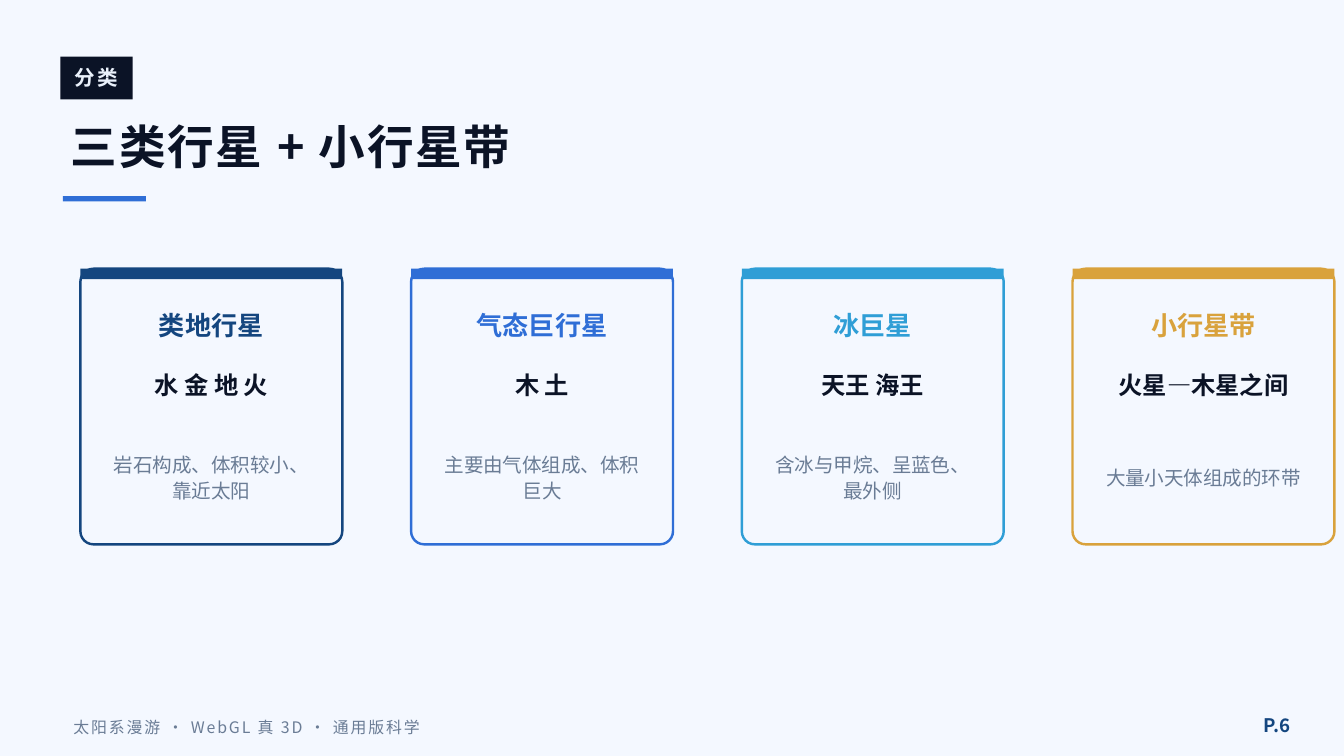
from pptx import Presentation
from pptx.dml.color import RGBColor
from pptx.enum.shapes import MSO_SHAPE
from pptx.enum.text import MSO_ANCHOR, PP_ALIGN
from pptx.util import Cm, Pt

RECT = MSO_SHAPE.RECTANGLE
ROUND = MSO_SHAPE.ROUNDED_RECTANGLE
MIDDLE = MSO_ANCHOR.MIDDLE
LEFT, CENTER, RIGHT = PP_ALIGN.LEFT, PP_ALIGN.CENTER, PP_ALIGN.RIGHT

FONT = "Noto Sans CJK SC"
PAPER, INK, NAVY, BLUE, GRAY = "F4F8FF", "0B1326", "14467F", "2F6ED6", "6A7C95"
CARDS = [
    ("类地行星", "水 金 地 火", "岩石构成、体积较小、靠近太阳", NAVY),
    ("气态巨行星", "木 土", "主要由气体组成、体积巨大", BLUE),
    ("冰巨星", "天王 海王", "含冰与甲烷、呈蓝色、最外侧", "2F9ED6"),
    ("小行星带", "火星—木星之间", "大量小天体组成的环带", "D9A23C"),
]
START, STEP, TOP, WIDTH, HEIGHT, PAD = 1.52, 6.25, 5.08, 4.95, 5.21, 0.3


def paint(fill, color):
    """Give a fill one solid colour."""
    fill.solid()
    fill.fore_color.rgb = RGBColor.from_string(color)


def add_box(slide, x, y, w, h, color, kind=RECT, line=None):
    """Add a filled shape, with an outline if a line colour is given."""
    shape = slide.shapes.add_shape(kind, Cm(x), Cm(y), Cm(w), Cm(h))
    shape.shadow.inherit = False
    paint(shape.fill, color)
    if line:
        paint(shape.line.fill, line)
        shape.line.width = Pt(1.3)
    else:
        shape.line.fill.background()
    return shape


def add_text(slide, text, x, y, w, h, size, color, bold=False, align=LEFT,
             track=0, lead=None, inset=0.25):
    """Add one line or paragraph of text, centred in height."""
    frame = slide.shapes.add_textbox(Cm(x), Cm(y), Cm(w), Cm(h)).text_frame
    frame.word_wrap = True
    frame.vertical_anchor = MIDDLE
    frame.margin_left = frame.margin_right = Cm(inset)
    para = frame.paragraphs[0]
    para.alignment = align
    if lead:
        para.line_spacing = Pt(lead)
    run = para.add_run()
    run.text = text
    font = run.font
    font.size, font.bold, font.name = Pt(size), bold, FONT
    font.color.rgb = RGBColor.from_string(color)
    props = run.font._element
    if track:
        props.set("spc", str(track * 100))
    east = props.makeelement(props.find("{*}latin").tag.replace("latin", "ea"), {"typeface": FONT})
    props.find("{*}latin").addnext(east)


def add_card(slide, x, name, planets, note, color):
    """Add one class of bodies as an outlined card."""
    card = add_box(slide, x, TOP, WIDTH, HEIGHT, PAPER, ROUND, color)
    card.adjustments[0] = 0.05
    add_box(slide, x, TOP, WIDTH, 0.2, color)
    add_text(slide, name, x, 5.64, WIDTH, 1.02, 14, color, bold=True, align=CENTER)
    add_text(slide, planets, x, 6.76, WIDTH, 1.02, 13, INK, bold=True, align=CENTER)
    add_text(slide, note, x + PAD, 7.92, WIDTH - 2 * PAD, 2.16, 10.5, GRAY,
             align=CENTER, lead=14)


def add_head(slide):
    """Add the tag, the title and its underline."""
    add_box(slide, 1.14, 1.07, 1.37, 0.81, INK)
    add_text(slide, "分类", 1.14, 1.04, 1.37, 0.86, 11, "EAF1FB", bold=True,
             align=CENTER, track=1, inset=0)
    add_text(slide, "三类行星 + 小行星带", 1.09, 1.98, 22.86, 1.57, 25, INK,
             bold=True, track=1)
    add_box(slide, 1.19, 3.71, 1.57, 0.1, BLUE)


def add_foot(slide):
    """Add the footer and the page number."""
    add_text(slide, "太阳系漫游 · WebGL 真 3D · 通用版科学", 1.14, 13.36, 16.51, 0.76,
             8.5, GRAY, track=1)
    add_text(slide, "P.6", 23.11, 13.31, 1.52, 0.81, 10, NAVY, bold=True, align=RIGHT)


def main():
    """Build and save the slide."""
    deck = Presentation()
    deck.slide_width, deck.slide_height = Cm(25.4), Cm(14.29)
    slide = deck.slides.add_slide(deck.slide_layouts[6])
    paint(slide.background.fill, PAPER)
    add_head(slide)
    for i, card in enumerate(CARDS):
        add_card(slide, START + i * STEP, *card)
    add_foot(slide)
    deck.save("out.pptx")


if __name__ == "__main__":
    main()
